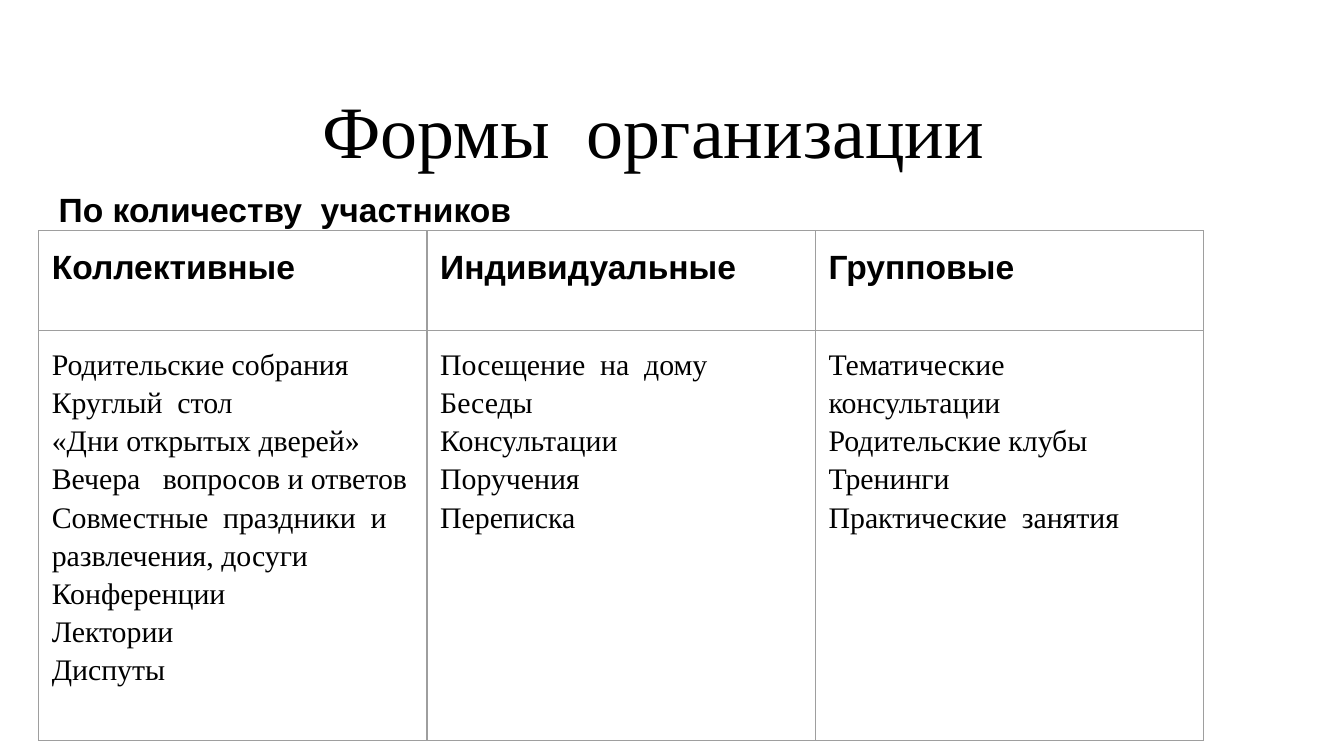
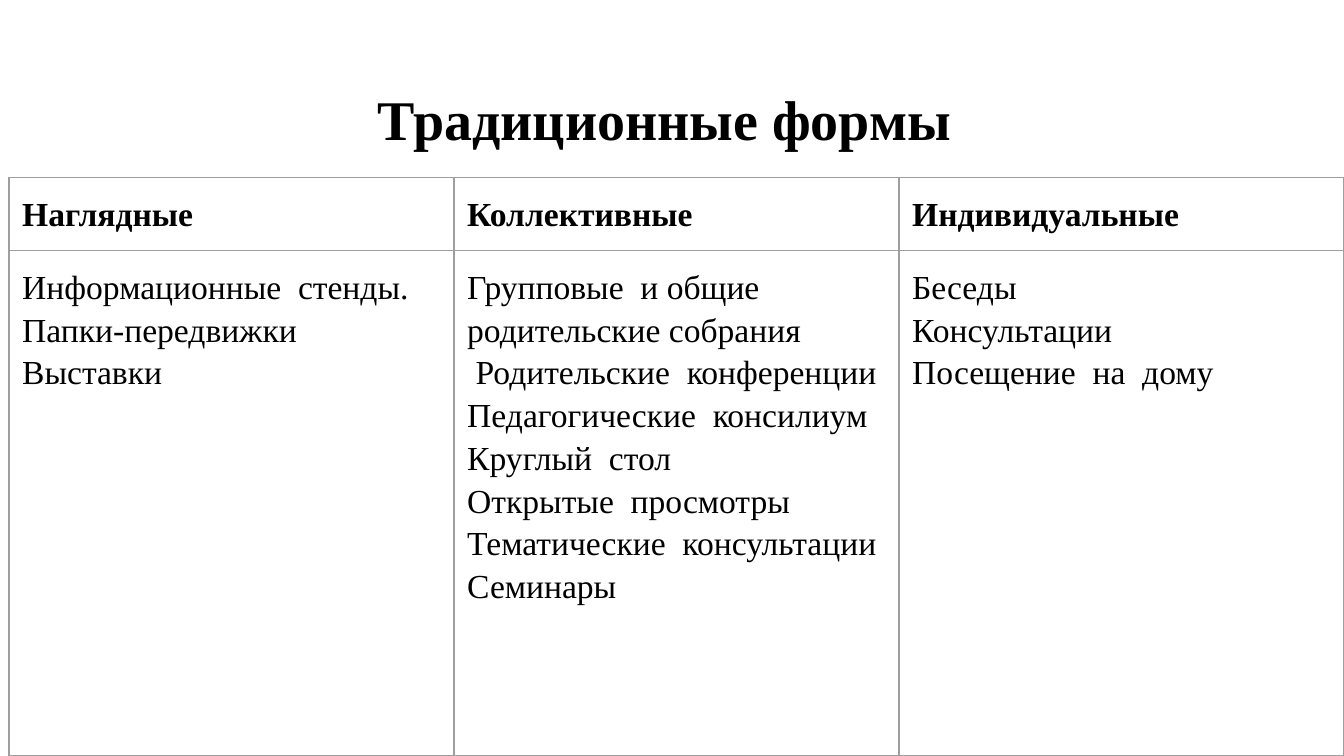
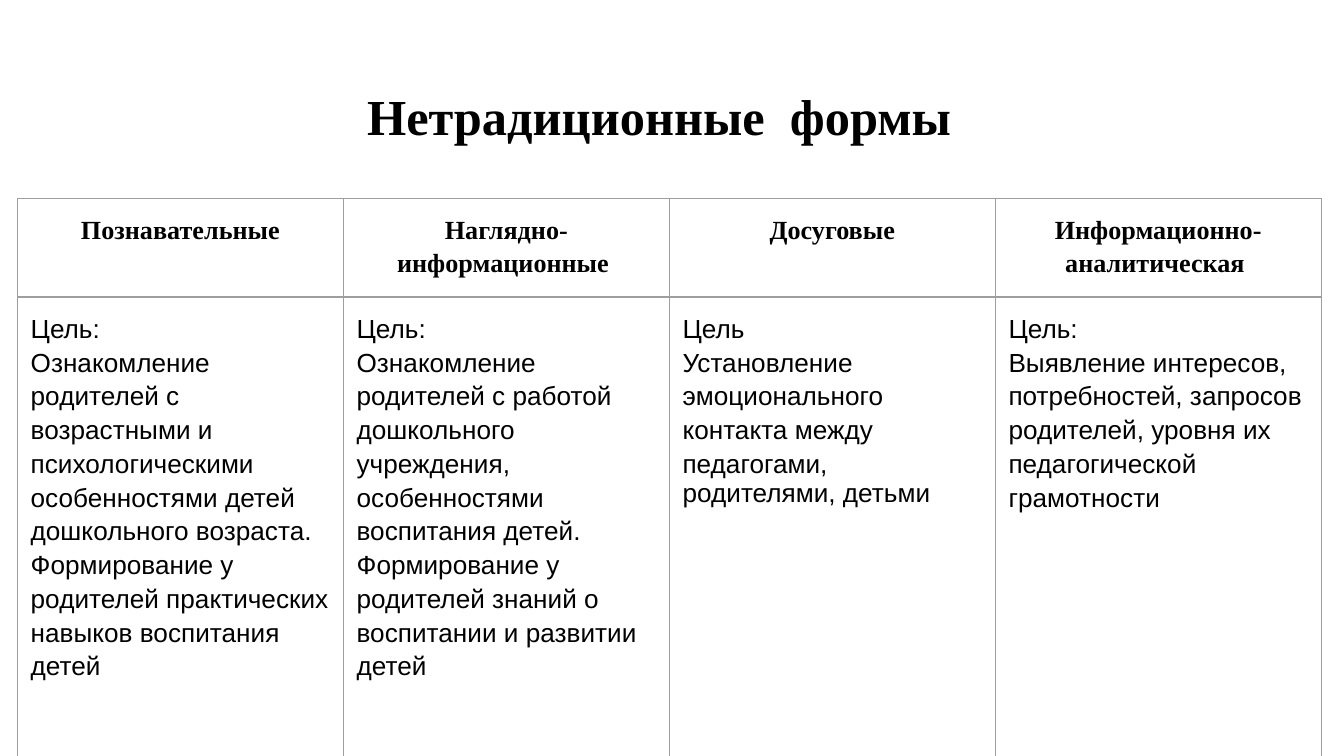
from dataclasses import dataclass

from lxml import etree
from pptx import Presentation
from pptx.dml.color import RGBColor
from pptx.enum.text import MSO_ANCHOR, PP_ALIGN
from pptx.oxml.ns import qn
from pptx.util import Cm, Pt

LEFT, CENTER = PP_ALIGN.LEFT, PP_ALIGN.CENTER
TOP = MSO_ANCHOR.TOP

BLACK = RGBColor(0x00, 0x00, 0x00)
WHITE = RGBColor(0xFF, 0xFF, 0xFF)
GRID = RGBColor(0x9E, 0x9E, 0x9E)

SERIF, SANS = "Times New Roman", "Arial"
INSET = Cm(0.25)
TITLE_INSET = Cm(0.36)
TEXT_LEFT, TEXT_WIDTH = Cm(0.86), Cm(23.67)
LOOSE = 1.15
BLANK_LAYOUT = 6


@dataclass(frozen=True)
class TextStyle:
    size: float
    font: str
    bold: bool = False
    align: PP_ALIGN = LEFT


@dataclass(frozen=True)
class Column:
    heading: list[str]
    lines: list[str]
    tight_last_line: bool = False


@dataclass(frozen=True)
class FormsTable:
    left: Cm
    top: Cm
    column_width: Cm
    heading_height: Cm
    body_height: Cm
    heading_style: TextStyle
    body_style: TextStyle
    columns: list[Column]


@dataclass(frozen=True)
class FormsSlide:
    title: str
    title_style: TextStyle
    table: FormsTable
    subtitle: str = ""


SLIDES = [
    FormsSlide(
        "Формы  организации  ",
        TextStyle(39.6, SERIF, align=CENTER),
        FormsTable(
            Cm(0.73), Cm(4.36), Cm(7.34), Cm(1.89), Cm(7.75),
            TextStyle(18, SANS, bold=True),
            TextStyle(16, SERIF),
            [
                Column(["Коллективные"], [
                    "Родительские собрания",
                    "Круглый  стол",
                    "«Дни открытых дверей»",
                    "Вечера   вопросов и ответов",
                    "Совместные  праздники  и развлечения, досуги",
                    "Конференции",
                    "Лектории",
                    "Диспуты",
                ]),
                Column(["Индивидуальные"], [
                    "Посещение  на  дому",
                    "Беседы",
                    "Консультации",
                    "Поручения",
                    "Переписка",
                ]),
                Column(["Групповые"], [
                    "Тематические  консультации",
                    "Родительские клубы",
                    "Тренинги",
                    "Практические  занятия",
                ]),
            ],
        ),
        subtitle="По количеству  участников",
    ),
    FormsSlide(
        "Традиционные формы ",
        TextStyle(30, SERIF, bold=True, align=CENTER),
        FormsTable(
            Cm(0.17), Cm(3.36), Cm(8.41), Cm(1.22), Cm(9.55),
            TextStyle(18, SERIF, bold=True),
            TextStyle(18, SERIF),
            [
                Column(["Наглядные"], [
                    "Информационные  стенды.",
                    "Папки-передвижки",
                    "Выставки",
                ]),
                Column(["Коллективные"], [
                    "Групповые  и общие  родительские собрания",
                    " Родительские  конференции",
                    "Педагогические  консилиум",
                    "Круглый  стол",
                    "Открытые  просмотры",
                    "Тематические  консультации",
                    "Семинары",
                ]),
                Column(["Индивидуальные"], [
                    "Беседы",
                    "Консультации",
                    "Посещение  на  дому",
                ]),
            ],
        ),
    ),
    FormsSlide(
        "Нетрадиционные  формы  ",
        TextStyle(27, SERIF, bold=True, align=CENTER),
        FormsTable(
            Cm(0.33), Cm(3.75), Cm(6.16), Cm(1.78), Cm(8.84),
            TextStyle(14, SERIF, bold=True, align=CENTER),
            TextStyle(14, SANS),
            [
                Column(["Познавательные"], [
                    "Цель:",
                    "Ознакомление родителей с возрастными и психологическими "
                    "особенностями детей дошкольного возраста. Формирование у "
                    "родителей практических навыков воспитания детей",
                ]),
                Column(["Наглядно-", "информационные "], [
                    "Цель:",
                    "Ознакомление родителей с работой дошкольного учреждения, "
                    "особенностями воспитания детей. Формирование у родителей "
                    "знаний о воспитании и развитии детей",
                ]),
                Column(["Досуговые"], [
                    "Цель",
                    "Установление эмоционального контакта между педагогами,",
                    "родителями, детьми",
                ], tight_last_line=True),
                Column(["Информационно-", "аналитическая "], [
                    "Цель:",
                    "Выявление интересов, потребностей, запросов родителей, "
                    "уровня их педагогической грамотности",
                ]),
            ],
        ),
    ),
]


def write_lines(frame, lines: list[str], *, style: TextStyle, spacing: float = LOOSE) -> None:
    for index, line in enumerate(lines):
        para = frame.paragraphs[0] if index == 0 else frame.add_paragraph()
        para.alignment = style.align
        para.line_spacing = spacing
        span = para.add_run()
        span.text = line
        span.font.size = Pt(style.size)
        span.font.name = style.font
        span.font.bold = style.bold
        span.font.color.rgb = BLACK


def add_text(page, text: str, *, top: Cm, height: Cm, style: TextStyle,
             spacing: float = LOOSE, top_inset: Cm = INSET) -> None:
    box = page.shapes.add_textbox(TEXT_LEFT, top, TEXT_WIDTH, height)
    frame = box.text_frame
    frame.word_wrap = True
    frame.vertical_anchor = TOP
    frame.margin_left = frame.margin_right = frame.margin_bottom = INSET
    frame.margin_top = top_inset
    write_lines(frame, [text], style=style, spacing=spacing)


def add_cell_borders(cell) -> None:
    properties = cell._tc.get_or_add_tcPr()
    for side in ("a:lnL", "a:lnR", "a:lnT", "a:lnB"):
        line = etree.SubElement(properties, qn(side), w=str(Pt(0.75)))
        fill = etree.SubElement(line, qn("a:solidFill"))
        etree.SubElement(fill, qn("a:srgbClr"), val=str(GRID))


def fill_cell(cell, lines: list[str], style: TextStyle) -> None:
    cell.margin_left = cell.margin_right = INSET
    cell.margin_top = cell.margin_bottom = INSET
    cell.vertical_anchor = TOP
    add_cell_borders(cell)
    cell.fill.background()
    write_lines(cell.text_frame, lines, style=style)


def add_forms_table(page, forms: FormsTable) -> None:
    count = len(forms.columns)
    heights = (forms.heading_height, forms.body_height)
    table = page.shapes.add_table(
        len(heights), count, forms.left, forms.top,
        forms.column_width * count, sum(heights),
    ).table
    table.first_row = False
    table.horz_banding = False
    for row, height in zip(table.rows, heights):
        row.height = height
    for index, column in enumerate(forms.columns):
        table.columns[index].width = forms.column_width
        fill_cell(table.cell(0, index), column.heading, forms.heading_style)
        body = table.cell(1, index)
        fill_cell(body, column.lines, forms.body_style)
        if column.tight_last_line:
            body.text_frame.paragraphs[-1].line_spacing = 1.0


def add_forms_slide(deck, content: FormsSlide) -> None:
    page = deck.slides.add_slide(deck.slide_layouts[BLANK_LAYOUT])
    page.background.fill.solid()
    page.background.fill.fore_color.rgb = WHITE
    add_text(page, content.title, top=Cm(1.24), height=Cm(1.6),
             style=content.title_style, spacing=1.0, top_inset=TITLE_INSET)
    if content.subtitle:
        add_text(page, content.subtitle, top=Cm(3.2), height=Cm(9.5),
                 style=TextStyle(18, SANS, bold=True))
    add_forms_table(page, content.table)


def main() -> None:
    deck = Presentation()
    deck.slide_width, deck.slide_height = Cm(25.4), Cm(14.29)
    for content in SLIDES:
        add_forms_slide(deck, content)
    deck.save("out.pptx")


if __name__ == "__main__":
    main()
